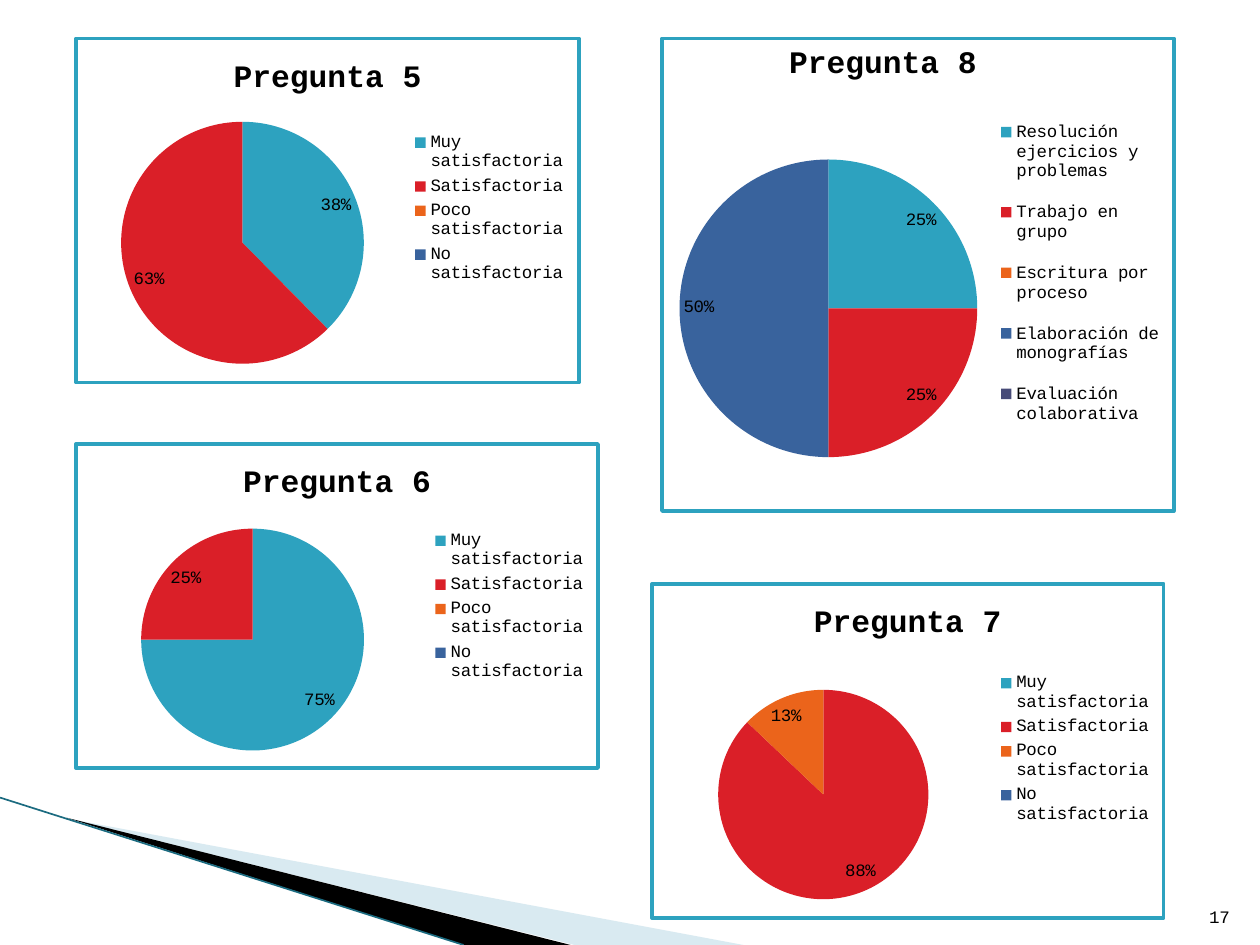
from pptx import Presentation
from pptx import util as u
from pptx.chart import data as cd
from pptx.dml.color import RGBColor
from pptx.enum import chart as ec, text as et
from pptx.oxml import parse_xml
from pptx.oxml.ns import nsdecls, qn
from lxml import etree

IN = u.Inches
FONT = "Courier New"
HEX = {"ink": "000000", "white": "FFFFFF", "teal": "2DA2BF", "red": "DA1F28",
       "orange": "EB641B", "blue": "39639D", "slate": "474B78",
       "pale": "A0CBDC", "edge": "1B6B80"}
WEDGES = ["teal", "red", "orange", "blue", "slate"]
LEVELS = ["Muy satisfactoria", "Satisfactoria", "Poco satisfactoria",
          "No satisfactoria"]
TASKS = ["Resolución ejercicios y problemas", "Trabajo en grupo",
         "Escritura por proceso", "Elaboración de monografías",
         "Evaluación colaborativa"]

# Box: left, top, width, height; pie: left, top, diameter within the box;
# key: left, top, width, height within the box; head: left, top of the title
PIES = [
    dict(title="Pregunta 5", name="Series 1", cats=LEVELS, vals=[38, 63, 0, 0],
         box=(0.59, 0.29, 4.02, 2.76), pie=(0.36, 0.67, 1.94),
         key=(2.65, 0.72, 1.3, 1.29)),
    dict(title="Pregunta 6", name="Series 1", cats=LEVELS, vals=[75, 25, 0, 0],
         box=(0.59, 3.51, 4.17, 2.6), pie=(0.52, 0.68, 1.78),
         key=(2.81, 0.66, 1.3, 1.29)),
    dict(title="Pregunta 7", name="Series 1", cats=LEVELS, vals=[0, 88, 13, 0],
         box=(5.16, 4.62, 4.09, 2.68), pie=(0.53, 0.85, 1.68),
         key=(2.73, 0.68, 1.3, 1.29)),
    dict(title="Pregunta 8", name="Pregunta 8", cats=TASKS, vals=[25, 25, 0, 50, 0],
         box=(5.24, 0.29, 4.09, 3.78), pie=(0.14, 0.97, 2.38),
         key=(2.65, 0.51, 1.38, 2.75), head=(0.97, 0)),
]


def rgb(name):
    return RGBColor.from_string(HEX[name])


def style(font, size=10, bold=False, color="ink"):
    font.name, font.size, font.bold = FONT, u.Pt(size), bold
    font.color.rgb = rgb(color)


def write(frame, words, align=None, anchor=None, **fmt):
    para = frame.paragraphs[0]
    run = para.add_run()
    run.text = words
    style(run.font, **fmt)
    if align is not None:
        para.alignment = align
    if anchor is not None:
        frame.vertical_anchor = anchor


def layout(box, left, top, wide=None, high=None, inner=False):
    """Manual chart layout from lengths inside the chart's box."""
    parts = [("xMode", "edge"), ("yMode", "edge"),
             ("x", left / box[2]), ("y", top / box[3])]
    if inner:
        parts.insert(0, ("layoutTarget", "inner"))
    if wide:
        parts += [("w", wide / box[2]), ("h", high / box[3])]
    body = "".join(f'<c:{tag} val="{val}"/>' for tag, val in parts)
    return parse_xml(f'<c:layout {nsdecls("c")}><c:manualLayout>{body}'
                     '</c:manualLayout></c:layout>')


def place(node, new, after=None):
    """Put a layout in a chart part, in place of any it has."""
    for old in node.findall(qn("c:layout")):
        node.remove(old)
    if after is None:
        node.insert(0, new)
    else:
        node.find(qn(after)).addnext(new)


def pie_chart(slide, box, title, name, cats, vals, pie, key, head=None):
    data = cd.CategoryChartData()
    data.categories = cats
    data.add_series(name, vals)
    chart = slide.shapes.add_chart(ec.XL_CHART_TYPE.PIE, *map(IN, box), data).chart
    style(chart.font)

    # Title and legend
    chart.has_title = True
    write(chart.chart_title.text_frame, title, size=18, bold=True)
    chart.chart_title.include_in_layout = False
    chart.has_legend = True
    chart.legend.position = ec.XL_LEGEND_POSITION.RIGHT
    chart.legend.include_in_layout = False
    style(chart.legend.font)

    # Wedges and labels
    plot = chart.plots[0]
    plot.vary_by_categories = True
    for i in range(len(cats)):
        fill = plot.series[0].points[i].format.fill
        fill.solid()
        fill.fore_color.rgb = rgb(WEDGES[i])
    labels = plot.series[0].data_labels
    labels.show_percentage = False
    labels.show_value = True
    labels.number_format = '0"%"'
    labels.number_format_is_linked = False
    labels.position = ec.XL_LABEL_POSITION.BEST_FIT
    style(labels.font)
    empty = [i for i, val in enumerate(vals) if not val]
    for spot, i in enumerate(empty):
        labels._element.insert(spot, parse_xml(
            f'<c:dLbl {nsdecls("c")}><c:idx val="{i}"/>'
            '<c:delete val="1"/></c:dLbl>'))

    # Positions inside the box
    root = chart.element.find(qn("c:chart"))
    left, top, size = pie
    place(root.find(qn("c:plotArea")), layout(box, left, top, size, size, True))
    place(root.find(qn("c:legend")), layout(box, *key), "c:legendPos")
    if head:
        place(root.find(qn("c:title")), layout(box, *head), "c:tx")

    # Frame
    root.addnext(parse_xml(
        f'<c:spPr {nsdecls("c", "a")}>'
        f'<a:solidFill><a:srgbClr val="{HEX["white"]}"/></a:solidFill>'
        f'<a:ln w="{u.Pt(2)}"><a:solidFill><a:srgbClr val="{HEX["teal"]}"/>'
        '</a:solidFill></a:ln></c:spPr>'))


def sliver(slide, points, color, alpha=None):
    spots = [(IN(x), IN(y)) for x, y in points]
    pen = slide.shapes.build_freeform(*spots[0])
    pen.add_line_segments(spots[1:], close=True)
    shape = pen.convert_to_shape()
    shape.shadow.inherit = False
    shape.line.fill.background()
    shape.fill.solid()
    shape.fill.fore_color.rgb = rgb(color)
    if alpha:
        tint = shape.fill._xPr.find(".//" + qn("a:srgbClr"))
        etree.SubElement(tint, qn("a:alpha")).set("val", str(alpha * 1000))


def corner(slide, left, top, right, base):
    """Swoosh in the lower left of the slide."""
    sliver(slide, [(left + 0.55, top + 0.17), (right, base), (4.56, base)], "pale", 40)
    sliver(slide, [(left + 0.53, top + 0.16), (4.53, base), (3.68, base)], "ink")
    line = slide.shapes.add_connector(1, IN(left), IN(top), IN(3.68), IN(base))
    line.line.color.rgb = rgb("edge")
    line.line.width = u.Pt(0.95)
    etree.SubElement(line._element.spPr, qn("a:effectLst"))


def number(slide, box, words):
    frame = slide.shapes.add_textbox(*map(IN, box)).text_frame
    frame.word_wrap = True
    write(frame, words, align=et.PP_ALIGN.RIGHT, anchor=et.MSO_ANCHOR.BOTTOM)


def main():
    deck = Presentation()
    deck.slide_width, deck.slide_height = IN(10), IN(7.5)
    slide = deck.slides.add_slide(deck.slide_layouts[6])
    corner(slide, 0, 6.33, 5.9, 7.5)
    for item in PIES:
        pie_chart(slide, **item)
    number(slide, (9.46, 7.01, 0.4, 0.4), "17")
    deck.save("out.pptx")


if __name__ == "__main__":
    main()
